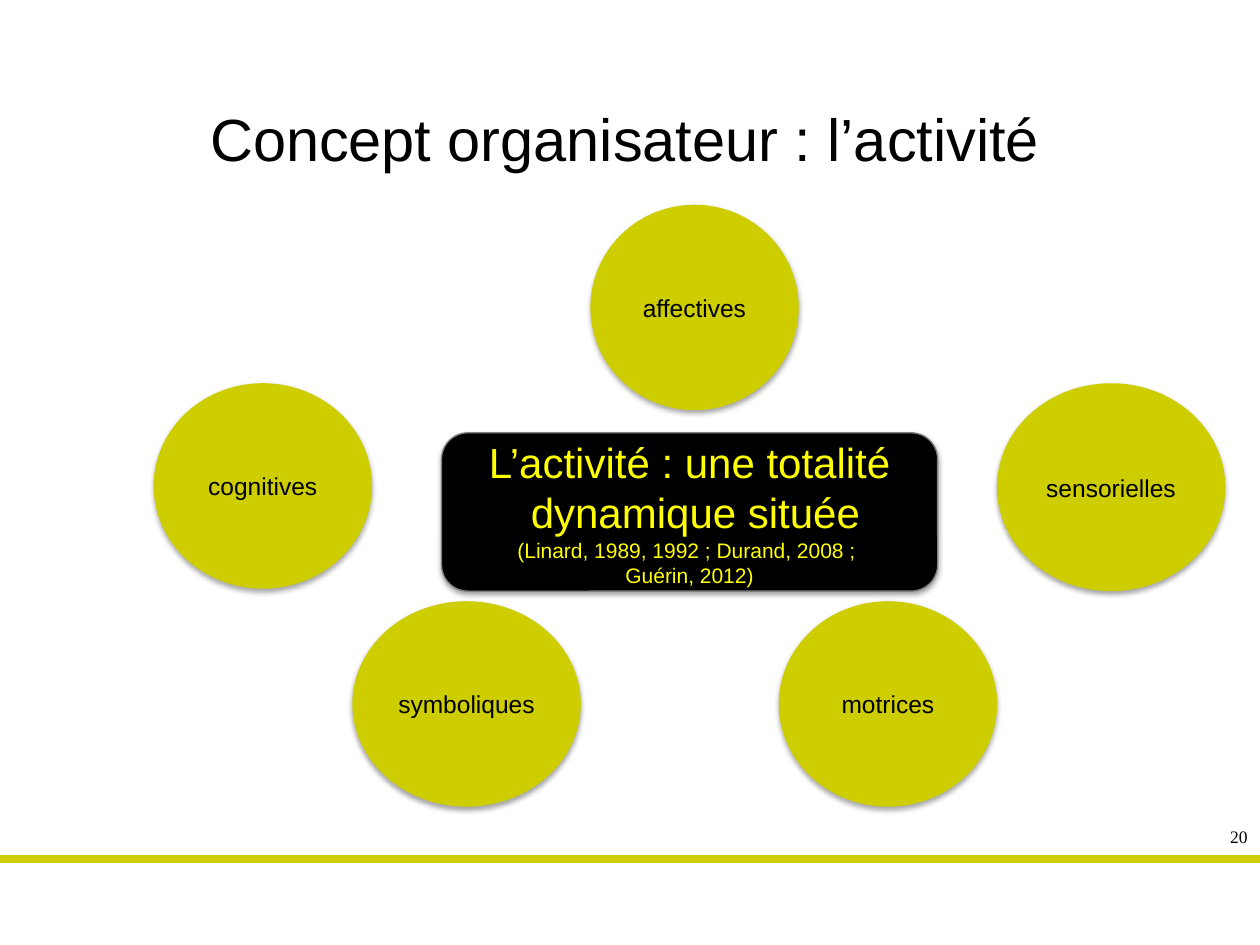
from lxml.etree import SubElement
from pptx import Presentation
from pptx.dml.color import RGBColor
from pptx.enum.shapes import MSO_CONNECTOR as Link, MSO_SHAPE as Shape
from pptx.enum.text import MSO_ANCHOR as Anchor, MSO_AUTO_SIZE as Fit, PP_ALIGN as Align
from pptx.oxml.ns import qn
from pptx.util import Pt

WIDE, HIGH = 720, 540
LIME, BLACK, YELLOW, GREY = "CDCD00", "000000", "FFFF00", "808080"


def color(code):
    return RGBColor.from_string(code)


class Page:
    """Style and current slide; all lengths are in points."""

    font = "Arial"

    def __init__(self, slide):
        self.slide = slide
        self.shapes = slide.shapes

    def fill_text(self, frame, text, sizes, ink=BLACK, align=Align.CENTER, font=None):
        frame.text = text
        for para, size in zip(frame.paragraphs, sizes):
            para.alignment = align
            for run in para.runs:
                run.font.name = font or self.font
                run.font.size = Pt(size)
                run.font.color.rgb = color(ink)

    def shade(self, shape, alpha, dist):
        shape.shadow.inherit = False
        effects = shape._element.spPr.find(qn("a:effectLst"))
        outer = SubElement(effects, qn("a:outerShdw"), blurRad=str(Pt(3.1)),
                           dist=str(Pt(dist)), dir="5400000", rotWithShape="0")
        tint = SubElement(outer, qn("a:srgbClr"), val=BLACK)
        SubElement(tint, qn("a:alpha"), val=str(alpha * 1000))

    def title(self, text, *box):
        shape = self.shapes.title
        shape.left, shape.top, shape.width, shape.height = map(Pt, box)
        frame = shape.text_frame
        frame.auto_size = Fit.NONE
        frame.vertical_anchor = Anchor.TOP
        self.fill_text(frame, text, [34], align=Align.LEFT)

    def label(self, text, *box):
        frame = self.shapes.add_textbox(*map(Pt, box)).text_frame
        frame.word_wrap = True
        self.fill_text(frame, text, [10], align=Align.RIGHT, font="Times New Roman")

    def rule(self, y):
        line = self.shapes.add_connector(Link.STRAIGHT, Pt(WIDE), Pt(y), Pt(0), Pt(y))
        line.line.color.rgb = color(LIME)
        line.line.width = Pt(4.5)
        SubElement(line._element.spPr, qn("a:effectLst"))

    def solid(self, kind, fill, box):
        shape = self.shapes.add_shape(kind, *map(Pt, box))
        shape.fill.solid()
        shape.fill.fore_color.rgb = color(fill)
        shape.text_frame.vertical_anchor = Anchor.MIDDLE
        return shape

    def disc(self, text, *box):
        shape = self.solid(Shape.OVAL, LIME, box)
        shape.line.fill.background()
        self.shade(shape, 35, 1.8)
        shape.text_frame.word_wrap = False
        self.fill_text(shape.text_frame, text, [14])

    def core(self, text, sizes, *box):
        shape = self.solid(Shape.ROUNDED_RECTANGLE, BLACK, box)
        shape.line.color.rgb = color(GREY)
        shape.line.width = Pt(0.75)
        self.shade(shape, 38, 1.6)
        self.fill_text(shape.text_frame, text, sizes, YELLOW)


def main():
    deck = Presentation()
    deck.slide_width, deck.slide_height = Pt(WIDE), Pt(HIGH)
    page = Page(deck.slides.add_slide(deck.slide_layouts[5]))

    # Footer rule and page number
    page.rule(491)
    page.label("20", 683.3, 468.7, 36.7, 19.4)

    # Title
    page.title("Concept organisateur : l’activité", 113, 54.7, 590.4, 67.7)

    # Dimensions around the centre
    for name, left, top, width, height in (
        ("affectives", 337.4, 117, 119, 117.4),
        ("motrices", 445, 343.6, 124.8, 117.4),
        ("cognitives", 87.8, 219, 124.8, 117.4),
        ("sensorielles", 569.7, 219, 130.5, 118.8),
        ("symboliques", 201.4, 343.6, 130.5, 117.4),
    ):
        page.disc(name, left, top, width, height)

    # Central concept, with line breaks inside each paragraph
    page.core("L’activité : une totalité\v dynamique située\n"
              "(Linard, 1989, 1992 ; Durand, 2008 ; \vGuérin, 2012)",
              [24, 12], 252.3, 247.3, 283.5, 90.5)

    deck.save("out.pptx")


if __name__ == "__main__":
    main()
